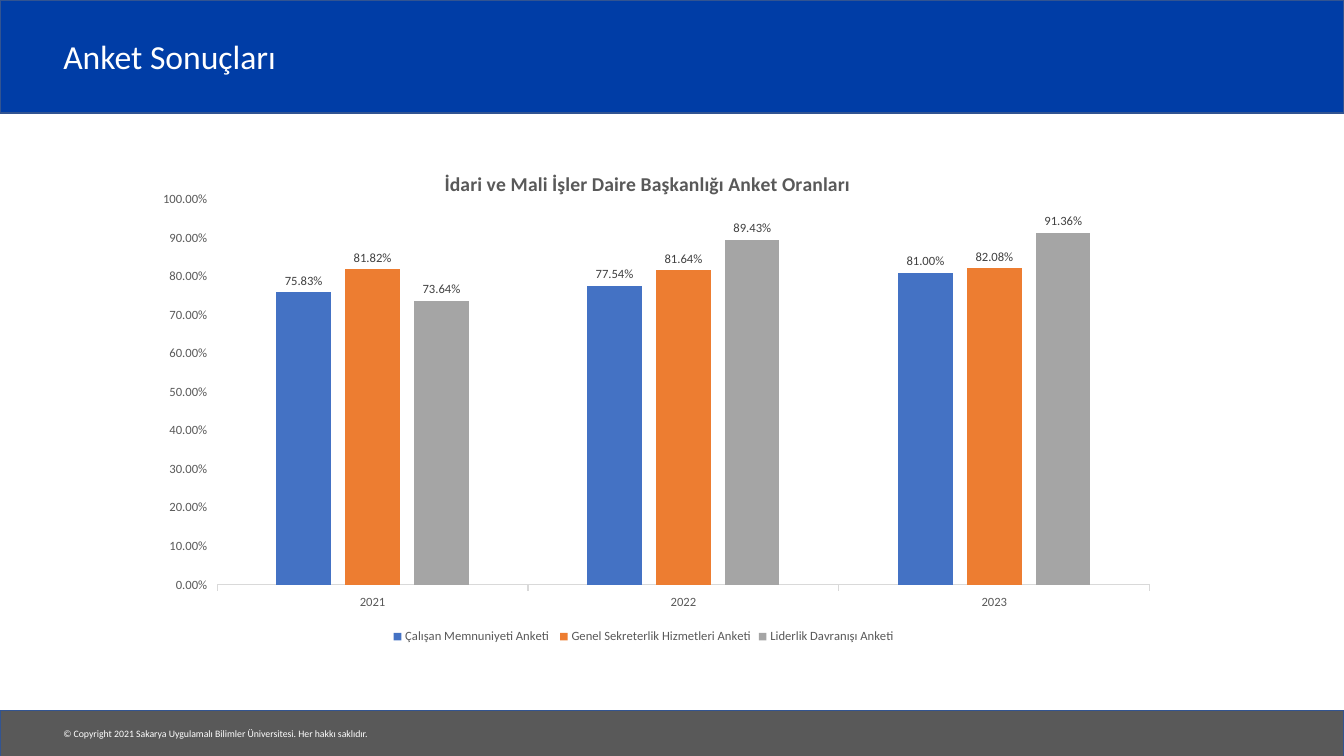
from pptx import Presentation
from pptx.chart.data import CategoryChartData
from pptx.dml.color import RGBColor
from pptx.enum.chart import XL_CHART_TYPE, XL_LABEL_POSITION, XL_LEGEND_POSITION, XL_TICK_MARK
from pptx.enum.shapes import MSO_SHAPE
from pptx.enum.text import MSO_ANCHOR
from pptx.oxml import parse_xml
from pptx.oxml.ns import nsdecls, qn
from pptx.util import Inches, Pt

WIDTH, HEIGHT = 13.33, 7.5
FONT = "Calibri"
WHITE, BLUE, GREY, EDGE = "FFFFFF", "003DA6", "595959", "325491"
LEFT = 0.53

YEARS = ["2021", "2022", "2023"]
SURVEYS = [
    ("Çalışan Memnuniyeti Anketi ", "4472C4", [0.7583, 0.7754, 0.81]),
    ("Genel Sekreterlik Hizmetleri Anketi", "ED7D31", [0.8182, 0.8164, 0.8208]),
    ("Liderlik Davranışı Anketi", "A5A5A5", [0.7364, 0.8943, 0.9136]),
]


def color(code):
    return RGBColor.from_string(code)


def style_font(font, size, code, bold=False):
    font.name, font.size, font.bold = FONT, Pt(size), bold
    font.color.rgb = color(code)


def add_band(page, top, height, fill):
    """Full-width coloured band."""
    band = page.shapes.add_shape(
        MSO_SHAPE.RECTANGLE, 0, Inches(top), Inches(WIDTH), Inches(height))
    band.shadow.inherit = False
    band.fill.solid()
    band.fill.fore_color.rgb = color(fill)
    band.line.color.rgb = color(EDGE)
    band.line.width = Pt(1)


def add_text(page, text, top, width, height, size, wrap=True):
    box = page.shapes.add_textbox(
        Inches(LEFT), Inches(top), Inches(width), Inches(height))
    frame = box.text_frame
    frame.word_wrap = wrap
    frame.vertical_anchor = MSO_ANCHOR.MIDDLE
    frame.text = text
    style_font(frame.paragraphs[0].runs[0].font, size, WHITE)


def set_layout(element, index, target="", **shares):
    """Place a chart part by shares of the chart's size."""
    for old in element.findall(qn("c:layout")):
        element.remove(old)
    inner = f'<c:layoutTarget val="{target}"/>' if target else ""
    inner += "".join(f'<c:{key}Mode val="edge"/>' for key in "xy")
    inner += "".join(f'<c:{key} val="{share}"/>' for key, share in shares.items())
    element.insert(index, parse_xml(
        f'<c:layout {nsdecls("c")}><c:manualLayout>{inner}</c:manualLayout></c:layout>'))


def style_axes(chart):
    years, rates = chart.category_axis, chart.value_axis
    for axis in (years, rates):
        axis.has_major_gridlines = False
        style_font(axis.tick_labels.font, 9, GREY)
    years.major_tick_mark = XL_TICK_MARK.OUTSIDE
    years.format.line.color.rgb = color("D9D9D9")
    years.format.line.width = Pt(0.75)
    rates.minimum_scale, rates.maximum_scale, rates.major_unit = 0, 1, 0.1
    rates.major_tick_mark = XL_TICK_MARK.OUTSIDE
    rates.format.line.fill.background()
    rates.tick_labels.number_format = "0.00%"
    rates.tick_labels.number_format_is_linked = False


def style_series(series, fill):
    series.format.fill.solid()
    series.format.fill.fore_color.rgb = color(fill)
    labels = series.data_labels
    labels.show_value = True
    labels.position = XL_LABEL_POSITION.OUTSIDE_END
    labels.number_format, labels.number_format_is_linked = "0.00%", False
    style_font(labels.font, 9, "404040")


def add_survey_chart(page):
    data = CategoryChartData(number_format="0.00%")
    data.categories = YEARS
    for name, _, rates in SURVEYS:
        data.add_series(name, rates)
    chart = page.shapes.add_chart(
        XL_CHART_TYPE.COLUMN_CLUSTERED,
        Inches(1.36), Inches(1.45), Inches(10.05), Inches(4.98), data).chart
    style_font(chart.font, 10, "000000")

    # Title
    chart.has_title = True
    title = chart.chart_title
    title.text_frame.text = "İdari ve Mali İşler Daire Başkanlığı Anket Oranları"
    style_font(title.text_frame.paragraphs[0].runs[0].font, 14, GREY, bold=True)
    set_layout(title._element, 1, x=0.3, y=0.04)

    # Columns
    plot = chart.plots[0]
    plot.vary_by_categories = False
    plot.gap_width, plot.overlap = 219, -27
    for series, (_, fill, _) in zip(plot.series, SURVEYS):
        style_series(series, fill)
    plot_area = chart._chartSpace.chart.plotArea
    set_layout(plot_area, 0, "inner", x=0.079, y=0.106, w=0.921, h=0.768)

    # Axes and legend
    style_axes(chart)
    chart.has_legend = True
    chart.legend.position = XL_LEGEND_POSITION.BOTTOM
    chart.legend.include_in_layout = False
    style_font(chart.legend.font, 9, GREY)


def main():
    deck = Presentation()
    deck.slide_width, deck.slide_height = Inches(WIDTH), Inches(HEIGHT)
    page = deck.slides.add_slide(deck.slide_layouts[6])

    # Header and footer
    add_band(page, 0, 1.12, BLUE)
    add_band(page, 7.05, 0.46, GREY)
    add_text(page, "© Copyright 2021 Sakarya Uygulamalı Bilimler Üniversitesi. "
             "Her hakkı saklıdır.", 7.17, 3.29, 0.22, 7, wrap=False)
    add_text(page, "Anket Sonuçları", 0.19, 11.03, 0.73, 24)

    add_survey_chart(page)
    deck.save("out.pptx")


if __name__ == "__main__":
    main()
